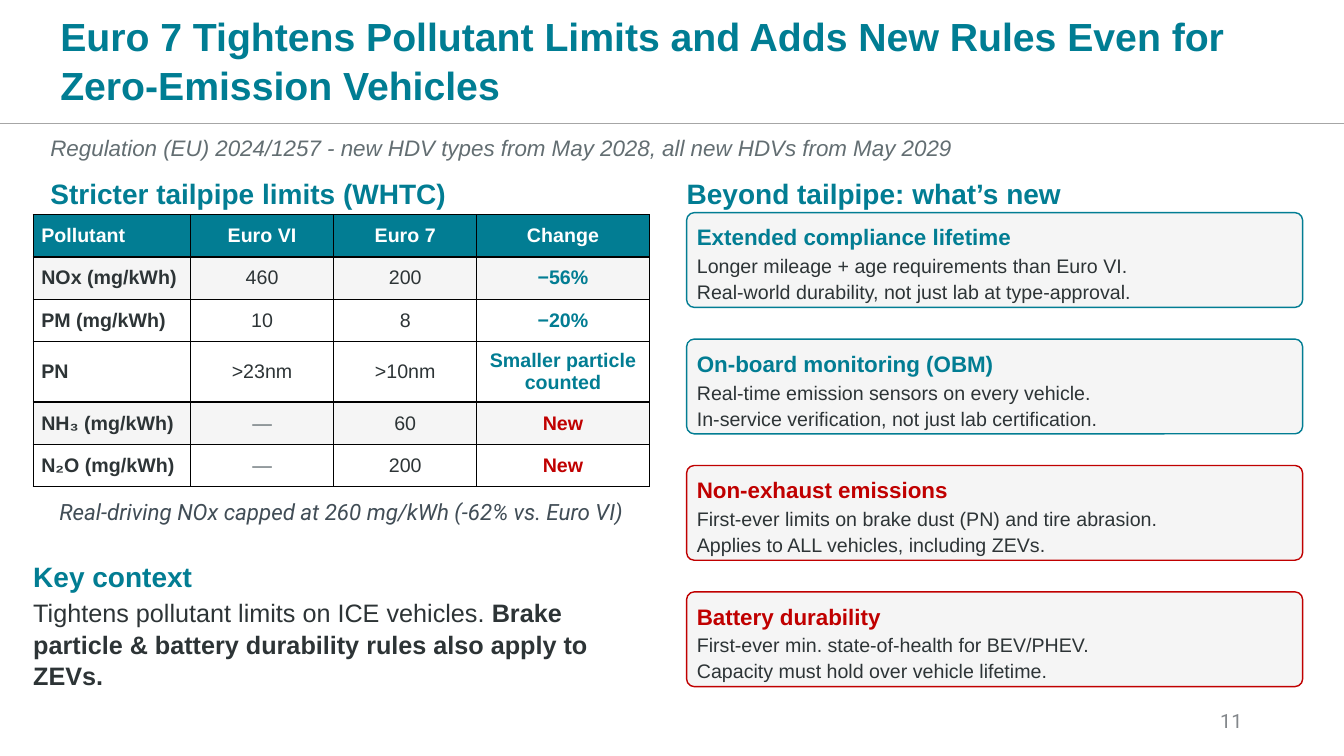
from lxml.etree import SubElement
from pptx import Presentation
from pptx.dml.color import RGBColor
from pptx.enum.shapes import MSO_CONNECTOR, MSO_SHAPE
from pptx.enum.text import MSO_ANCHOR as Anchor, PP_ALIGN as Align
from pptx.oxml.ns import qn
from pptx.util import Inches, Pt

COLORS = {
    "title": "007D93", "teal": "027D93", "red": "C00000", "dark": "2D3436",
    "gray": "636E72", "slate": "414D56", "number": "83878B", "rule": "A6A6A6",
    "panel": "F5F5F5", "white": "FFFFFF", "black": "000000",
}
NO_INSETS = (0, 0, 0, 0)
BOX_INSETS = (0.1, 0.05, 0.1, 0.05)

LIMITS = [
    (0.42, "teal", ["Pollutant", "Euro VI", "Euro 7", "Change"]),
    (0.42, "panel", ["NOx (mg/kWh)", "460", "200", "−56%"]),
    (0.42, "white", ["PM (mg/kWh)", "10", "8", "−20%"]),
    (0.6, "white", ["PN", ">23nm", ">10nm", "Smaller particle counted"]),
    (0.42, "panel", ["NH₃ (mg/kWh)", "—", "60", "New"]),
    (0.42, "white", ["N₂O (mg/kWh)", "—", "200", "New"]),
]
LIMIT_WIDTHS = [1.56, 1.42, 1.42, 1.71]

CARDS = [
    ("Extended compliance lifetime", "teal",
     ["Longer mileage + age requirements than Euro VI.",
      "Real-world durability, not just lab at type-approval."]),
    ("On-board monitoring (OBM)", "teal",
     ["Real-time emission sensors on every vehicle.",
      "In-service verification, not just lab certification."]),
    ("Non-exhaust emissions", "red",
     ["First-ever limits on brake dust (PN) and tire abrasion.",
      "Applies to ALL vehicles, including ZEVs."]),
    ("Battery durability", "red",
     ["First-ever min. state-of-health for BEV/PHEV.",
      "Capacity must hold over vehicle lifetime."]),
]


def rgb(name):
    return RGBColor.from_string(COLORS[name])


class SlideBuilder:
    def __init__(self, page, font="Arial"):
        self.page = page
        self.font = font

    def style(self, para, size, color, bold=False, italic=False, font=None,
              align=Align.LEFT, after=0, spacing=1.0):
        para.alignment = align
        para.space_after = Pt(after)
        para.line_spacing = spacing
        para.font.name = font or self.font
        para.font.size = Pt(size)
        para.font.color.rgb = rgb(color)
        para.font.bold = bold
        para.font.italic = italic

    def prepare(self, frame, insets, anchor=Anchor.TOP):
        frame.word_wrap = True
        frame.vertical_anchor = anchor
        (frame.margin_left, frame.margin_top,
         frame.margin_right, frame.margin_bottom) = map(Inches, insets)

    def text(self, place, words, size, color, insets=NO_INSETS,
             anchor=Anchor.TOP, **look):
        box = self.page.shapes.add_textbox(*map(Inches, place))
        self.prepare(box.text_frame, insets, anchor)
        para = box.text_frame.paragraphs[0]
        para.text = words
        self.style(para, size, color, **look)
        return box.text_frame

    def rule(self, left, top, right):
        line = self.page.shapes.add_connector(
            MSO_CONNECTOR.STRAIGHT, Inches(left), Inches(top),
            Inches(right), Inches(top))
        line.line.color.rgb = rgb("rule")
        line.line.width = Pt(0.5)
        SubElement(line._element.spPr, qn("a:effectLst"))

    def borders(self, cell):
        properties = cell._tc.get_or_add_tcPr()
        for side in ("lnL", "lnR", "lnT", "lnB"):
            line = SubElement(properties, qn(f"a:{side}"), w=str(Pt(1)))
            fill = SubElement(line, qn("a:solidFill"))
            SubElement(fill, qn("a:srgbClr"), val=COLORS["black"])

    def cell_color(self, row, column, words):
        if row == 0:
            return "white"
        if column == 3:
            return "red" if words == "New" else "teal"
        return "gray" if words == "—" else "dark"

    def table(self, left, top, widths, rows):
        height = sum(row[0] for row in rows)
        table = self.page.shapes.add_table(
            len(rows), len(widths), Inches(left), Inches(top),
            Inches(sum(widths)), Inches(height)).table
        for column, width in zip(table.columns, widths):
            column.width = Inches(width)
        for i, (height, fill, values) in enumerate(rows):
            table.rows[i].height = Inches(height)
            for j, words in enumerate(values):
                cell = table.cell(i, j)
                self.borders(cell)
                cell.fill.solid()
                cell.fill.fore_color.rgb = rgb(fill)
                cell.vertical_anchor = Anchor.MIDDLE
                cell.margin_left = Inches(0.04 if j else 0.08)
                cell.margin_top = cell.margin_right = cell.margin_bottom = Inches(0.04)
                para = cell.text_frame.paragraphs[0]
                para.text = words
                self.style(para, 14, self.cell_color(i, j, words),
                           bold=i == 0 or j in (0, 3),
                           align=Align.CENTER if j else Align.LEFT)

    def card(self, place, heading, color, lines):
        box = self.page.shapes.add_shape(
            MSO_SHAPE.ROUNDED_RECTANGLE, *map(Inches, place))
        box.adjustments[0] = 0.08
        box.shadow.inherit = False
        box.fill.solid()
        box.fill.fore_color.rgb = rgb("panel")
        box.line.color.rgb = rgb(color)
        box.line.width = Pt(1)
        frame = box.text_frame
        self.prepare(frame, (0.08, 0.06, 0.08, 0.04))
        title = frame.paragraphs[0]
        title.text = heading
        self.style(title, 16, color, bold=True, after=1, spacing=1.1)
        body = frame.add_paragraph()
        for i, words in enumerate(lines):
            if i:
                body.add_line_break()
            body.add_run().text = words
        self.style(body, 14, "dark", spacing=1.1)


def main():
    deck = Presentation()
    deck.slide_width, deck.slide_height = Inches(13.33), Inches(7.5)
    slide = SlideBuilder(deck.slides.add_slide(deck.slide_layouts[6]))

    slide.rule(0, 1.22, 13.33)
    slide.text((0.5, 0.15, 12.33, 0.88),
               "Euro 7 Tightens Pollutant Limits and Adds New Rules Even for "
               "Zero-Emission Vehicles",
               28, "title", BOX_INSETS, Anchor.MIDDLE, bold=True, spacing=1.04)
    slide.text((9.42, 6.95, 3, 0.4), "11", 14, "number", BOX_INSETS,
               Anchor.MIDDLE, font="Roboto", align=Align.RIGHT)
    slide.text((0.5, 1.32, 12.33, 0.31),
               "Regulation (EU) 2024/1257 - new HDV types from May 2028, "
               "all new HDVs from May 2029", 16, "gray", italic=True, spacing=1.04)

    for left, width, heading in [(0.5, 5.97, "Stricter tailpipe limits (WHTC)"),
                                 (6.81, 6.11, "Beyond tailpipe: what’s new")]:
        slide.text((left, 1.74, width, 0.31), heading, 20, "teal",
                   bold=True, spacing=1.04)

    slide.table(0.33, 2.13, LIMIT_WIDTHS, LIMITS)
    slide.text((0.33, 4.89, 6.11, 0.37),
               "Real-driving NOx capped at 260 mg/kWh (-62% vs. Euro VI)",
               16, "slate", BOX_INSETS, italic=True, font="Roboto",
               align=Align.CENTER)

    context = slide.text((0.33, 5.54, 5.97, 1.45), "Key context", 20, "teal",
                         bold=True, after=2, spacing=1.04)
    para = context.add_paragraph()
    para.add_run().text = "Tightens pollutant limits on ICE vehicles. "
    span = para.add_run()
    span.text = "Brake particle & battery durability rules also apply to ZEVs."
    span.font.bold = True
    slide.style(para, 18, "dark", spacing=1.04)

    for i, (heading, color, lines) in enumerate(CARDS):
        slide.card((6.81, 2.11 + i * 1.254, 6.11, 0.94), heading, color, lines)

    deck.save("out.pptx")


if __name__ == "__main__":
    main()
